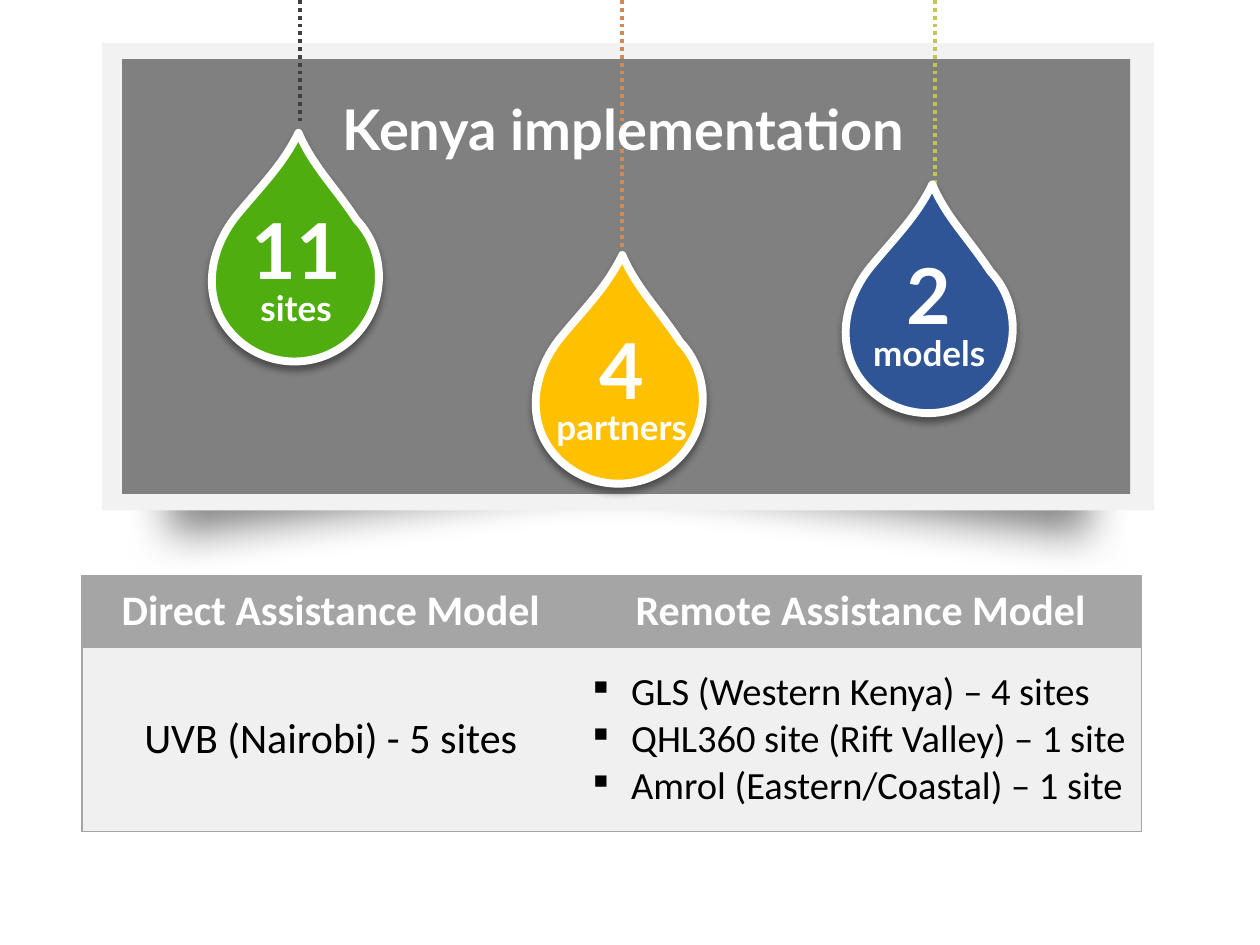
from lxml.etree import SubElement
from pptx import Presentation
from pptx.dml.color import RGBColor
from pptx.enum.dml import MSO_LINE
from pptx.enum.shapes import MSO_CONNECTOR, MSO_SHAPE
from pptx.enum.text import MSO_ANCHOR, MSO_AUTO_SIZE, PP_ALIGN
from pptx.oxml.ns import qn
from pptx.util import Emu, Pt

PX = 9144  # EMU in one px, 100 px to the inch

WHITE = RGBColor(0xFF, 0xFF, 0xFF)
BLACK = RGBColor(0x00, 0x00, 0x00)
FRAME = RGBColor(0xF2, 0xF2, 0xF2)
PANEL = RGBColor(0x80, 0x80, 0x80)
HEADER = RGBColor(0xA5, 0xA5, 0xA5)
BODY = RGBColor(0xF0, 0xF0, 0xF0)
CHARCOAL = RGBColor(0x40, 0x40, 0x40)
COPPER = RGBColor(0xD3, 0x89, 0x51)
OLIVE = RGBColor(0xC1, 0xC3, 0x5D)
GREEN = RGBColor(0x4F, 0xAD, 0x0F)
AMBER = RGBColor(0xFF, 0xC0, 0x00)
BLUE = RGBColor(0x2F, 0x55, 0x97)

# Drop outline in its own box, tip at the top right, before it is turned upright
DROP_ROTATION = 316.6
DROP_START = (0, 81)
DROP_CURVES = [
    ((0, 44), (31, 19), (67, 14)),
    ((100, 10), (121, 10), (148, 0)),
    ((138, 28), (140, 47), (134, 82)),
    ((134, 118), (104, 148), (67, 148)),
    ((30, 148), (0, 118), (0, 81)),
]


def px(value):
    return Emu(value * PX)


class SlideBuilder:
    heading_font = "Lato"
    table_font = "Calibri"

    def __init__(self, slide):
        self.slide = slide

    def rectangle(self, left, top, width, height, color):
        shape = self.slide.shapes.add_shape(
            MSO_SHAPE.RECTANGLE, px(left), px(top), px(width), px(height))
        self.paint(shape, color)

    def paint(self, shape, color):
        shape.shadow.inherit = False
        shape.fill.solid()
        shape.fill.fore_color.rgb = color
        shape.line.fill.background()

    def outline(self, points, color):
        start, *others = [(px(x), px(y)) for x, y in points]
        builder = self.slide.shapes.build_freeform(*start, scale=1.0)
        builder.add_line_segments(others, close=True)
        shape = builder.convert_to_shape()
        self.paint(shape, color)
        return shape, shape.element.spPr.find(qn("a:effectLst"))

    def soft_shadow(self, points, color):
        shape, effects = self.outline(points, color)
        SubElement(effects, qn("a:softEdge"), rad=str(Pt(25)))

    def drop(self, left, top, color):
        anchors = [DROP_START] + [curve[-1] for curve in DROP_CURVES]
        shape, effects = self.outline(
            [(left + x, top + y) for x, y in anchors], color)
        # Bend each straight side into its cubic curve
        sides = list(shape.element.spPr.iter(qn("a:lnTo")))
        for side, curve in zip(sides, DROP_CURVES):
            side.tag = qn("a:cubicBezTo")
            side.clear()
            for x, y in curve:
                SubElement(side, qn("a:pt"), x=str(px(x)), y=str(px(y)))
        shape.rotation = DROP_ROTATION
        shape.line.color.rgb = WHITE
        shape.line.width = Pt(4.5)
        SubElement(shape.element.spPr.find(qn("a:ln")), qn("a:round"))
        shadow = SubElement(effects, qn("a:outerShdw"), blurRad=str(Pt(4)),
                            dist=str(Pt(3)), dir="5400000", rotWithShape="0")
        shadow_color = SubElement(shadow, qn("a:srgbClr"), val=str(BLACK))
        SubElement(shadow_color, qn("a:alpha"), val="40000")

    def thread(self, x, length, color):
        connector = self.slide.shapes.add_connector(
            MSO_CONNECTOR.STRAIGHT, px(x), 0, px(x), px(length))
        connector.line.color.rgb = color
        connector.line.width = Pt(2.25)
        connector.line.dash_style = MSO_LINE.ROUND_DOT
        SubElement(connector.element.spPr, qn("a:effectLst"))

    def run(self, paragraph, text, size, color, font, bold):
        run = paragraph.add_run()
        run.text = text
        run.font.size = Pt(size)
        run.font.name = font
        run.font.bold = bold
        run.font.color.rgb = color

    def text(self, left, top, width, height, lines, spacing):
        box = self.slide.shapes.add_textbox(
            px(left), px(top), px(width), px(height))
        frame = box.text_frame
        frame.word_wrap = True
        frame.auto_size = MSO_AUTO_SIZE.SHAPE_TO_FIT_TEXT
        for index, runs in enumerate(lines):
            paragraph = frame.add_paragraph() if index else frame.paragraphs[0]
            paragraph.alignment = PP_ALIGN.CENTER
            paragraph.line_spacing = spacing
            for text, size in runs:
                self.run(paragraph, text, size, WHITE, self.heading_font, True)

    def table(self, left, top, columns, rows):
        table = self.slide.shapes.add_table(
            len(rows), len(columns), px(left), px(top),
            px(sum(columns)), px(sum(rows))).table
        for column, width in zip(table.columns, columns):
            column.width = px(width)
        for row, height in zip(table.rows, rows):
            row.height = px(height)
        return table

    def cell(self, cell, lines, size, color, fill, edges, bold=False, bulleted=False):
        cell.vertical_anchor = MSO_ANCHOR.MIDDLE
        self.borders(cell, edges)
        cell.fill.solid()
        cell.fill.fore_color.rgb = fill
        frame = cell.text_frame
        for index, text in enumerate(lines):
            paragraph = frame.add_paragraph() if index else frame.paragraphs[0]
            if bulleted:
                self.bullet(paragraph)
            else:
                paragraph.alignment = PP_ALIGN.CENTER
            self.run(paragraph, text, size, color, self.table_font, bold)

    def bullet(self, paragraph):
        properties = paragraph._p.get_or_add_pPr()
        properties.set("marL", str(px(31)))
        properties.set("indent", str(px(-31)))
        SubElement(properties, qn("a:buFont"), typeface="Wingdings", charset="2")
        SubElement(properties, qn("a:buChar"), char="§")  # small square

    def borders(self, cell, edges):
        properties = cell._tc.get_or_add_tcPr()
        for edge in "LRTB":
            line = SubElement(properties, qn(f"a:ln{edge}"), w=str(Pt(1)))
            if edge in edges:
                fill = SubElement(line, qn("a:solidFill"))
                SubElement(fill, qn("a:srgbClr"), val=str(HEADER))
            else:
                SubElement(line, qn("a:noFill"))


def main():
    presentation = Presentation()
    presentation.slide_width = px(1000)
    presentation.slide_height = px(750)
    slide = presentation.slides.add_slide(presentation.slide_layouts[6])
    builder = SlideBuilder(slide)

    # Framed panel with a curled shadow
    builder.soft_shadow(
        [(100, 131), (898, 131), (898, 467), (486, 416), (100, 467)], PANEL)
    builder.rectangle(81, 34, 835, 371, FRAME)
    builder.rectangle(97, 47, 800, 345, PANEL)

    # Drops on threads: thread x, length, color, then drop corner and color
    for x, length, thread_color, left, top, drop_color in [
        (238, 99, CHARCOAL, 160, 136, GREEN),
        (494, 203, COPPER, 417, 233, AMBER),
        (742, 147, OLIVE, 663, 177, BLUE),
    ]:
        builder.thread(x, length, thread_color)
        builder.drop(left, top, drop_color)

    # Drop labels and title
    for left, top, width, lines in [
        (185, 170, 100, [[("11", 44)], [("sites", 20)]]),
        (430, 265, 127, [[("4", 44)], [("partners", 20)]]),
        (677, 206, 121, [[("2", 44), (" ", 36), ("models", 20)]]),
    ]:
        builder.text(left, top, width, 97, lines, 0.8)
    builder.text(184, 54, 622, 74, [[("Kenya implementation", 32)]], 1.3)

    # Table of models
    table = builder.table(65, 457, [395, 446], [57, 146])
    for column, (title, edges) in enumerate(
            [("Direct Assistance Model", "LTB"), ("Remote Assistance Model", "RTB")]):
        builder.cell(table.cell(0, column), [title], 24, WHITE, HEADER, edges, bold=True)
    builder.cell(table.cell(1, 0), ["UVB (Nairobi) - 5 sites"], 24, BLACK, BODY, "LTB")
    builder.cell(table.cell(1, 1), [
        "GLS (Western Kenya) – 4 sites",
        "QHL360 site (Rift Valley) – 1 site",
        "Amrol (Eastern/Coastal) – 1 site",
    ], 22, BLACK, BODY, "RTB", bulleted=True)

    presentation.save("out.pptx")


if __name__ == "__main__":
    main()
